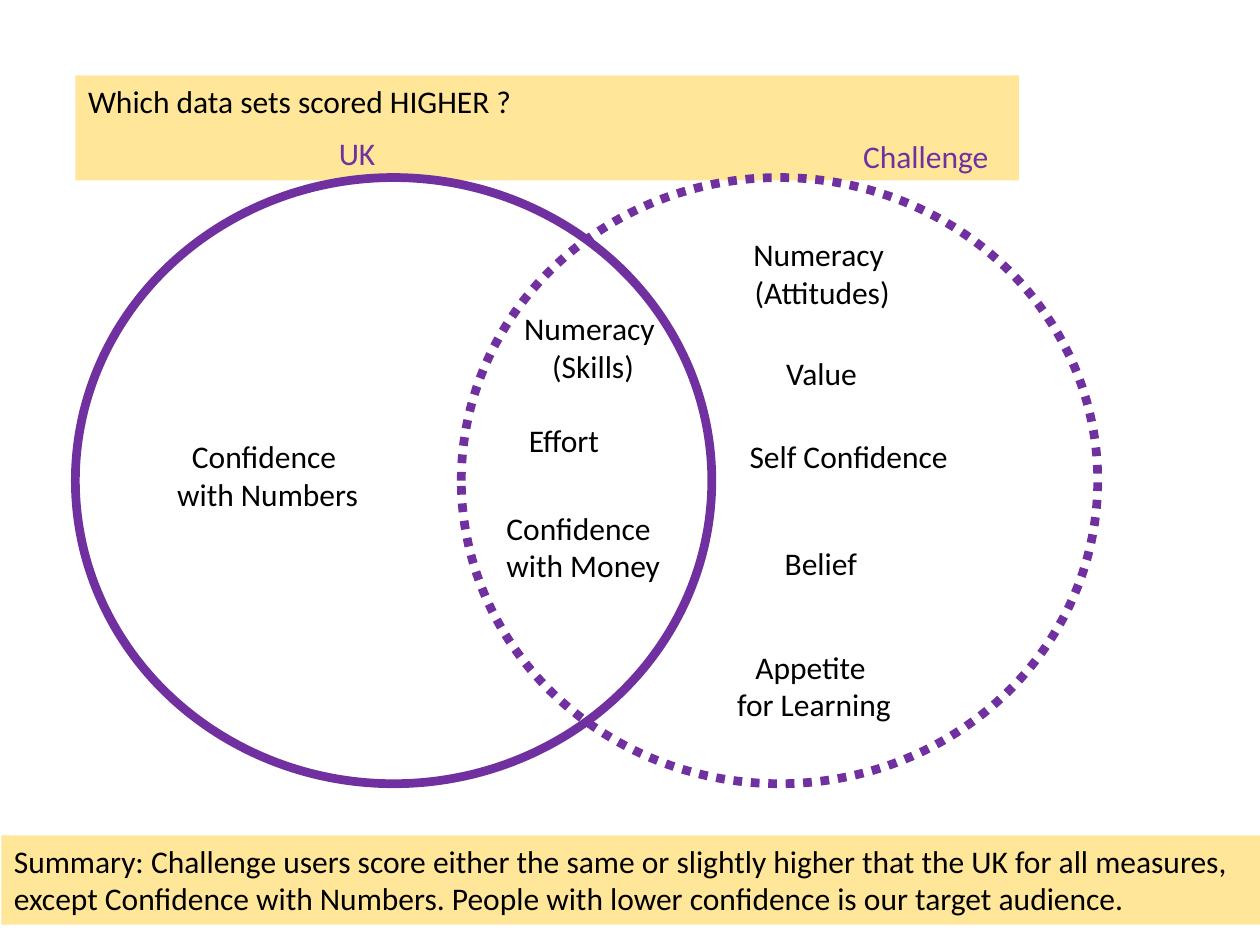
from pptx import Presentation
from pptx.dml.color import RGBColor
from pptx.enum.dml import MSO_LINE
from pptx.enum.shapes import MSO_SHAPE
from pptx.enum.text import MSO_ANCHOR, MSO_AUTO_SIZE, PP_ALIGN
from pptx.util import Cm, Pt

PURPLE, YELLOW, BLACK = "7030A0", "FFE699", "000000"
CIRCLE_TOP, CIRCLE_WIDTH, CIRCLE_HEIGHT = 3.58, 12.83, 12.22
FRAME_FORMAT = {
    "auto_size": MSO_AUTO_SIZE.SHAPE_TO_FIT_TEXT,
    "vertical_anchor": MSO_ANCHOR.TOP,
}
FONT_FORMAT = {"name": "Calibri", "size": Pt(18)}


def rgb(hex_colour):
    return RGBColor.from_string(hex_colour)


def box_height(lines):
    """Height in cm of a box that holds this many 18 pt lines."""
    return 1.02 + 0.78 * (len(lines) - 1)


def set_all(target, values):
    for attribute, value in values.items():
        setattr(target, attribute, value)


class VennSlide:
    def __init__(self, presentation):
        self.slide = presentation.slides.add_slide(presentation.slide_layouts[5])
        self.shapes = self.slide.shapes

    def set_text(self, shape, lines, colour=BLACK, align=PP_ALIGN.LEFT, wrap=True):
        frame = shape.text_frame
        frame.text = "\n".join(lines)
        set_all(frame, FRAME_FORMAT)
        frame.word_wrap = wrap
        for paragraph in frame.paragraphs:
            paragraph.alignment = align
            set_all(paragraph.font, FONT_FORMAT)
            paragraph.font.color.rgb = rgb(colour)

    def fill(self, shape):
        shape.fill.solid()
        shape.fill.fore_color.rgb = rgb(YELLOW)

    def circle(self, left, dash=MSO_LINE.SOLID):
        circle = self.shapes.add_shape(
            MSO_SHAPE.OVAL, Cm(left), Cm(CIRCLE_TOP), Cm(CIRCLE_WIDTH), Cm(CIRCLE_HEIGHT))
        circle.shadow.inherit = False
        circle.fill.background()
        circle.line.color.rgb = rgb(PURPLE)
        set_all(circle.line, {"width": Pt(5), "dash_style": dash})

    def label(self, left, top, width, lines, **style):
        label = self.shapes.add_textbox(
            Cm(left), Cm(top), Cm(width), Cm(box_height(lines)))
        self.set_text(label, lines, **style)

    def title(self, left, top, width, lines):
        title = self.shapes.title
        set_all(title, {"left": Cm(left), "top": Cm(top),
                        "width": Cm(width), "height": Cm(box_height(lines))})
        self.fill(title)
        self.set_text(title, lines)

    def banner(self, left, top, width, lines):
        banner = self.shapes.add_shape(
            MSO_SHAPE.RECTANGLE, Cm(left), Cm(top), Cm(width), Cm(box_height(lines)))
        banner.shadow.inherit = False
        banner.line.fill.background()
        self.fill(banner)
        self.set_text(banner, lines)


CENTRED_MEASURES = [
    (10.29, 6.1, 3.33, ["Numeracy ", "(Skills)"]),
    (14.91, 4.62, 3.33, ["Numeracy ", "(Attitudes)"]),
    (3.3, 8.69, 4.19, ["Confidence ", "with Numbers"]),
    (14.58, 12.93, 3.66, ["Appetite ", "for Learning"]),
]
LEFT_MEASURES = [
    (14.86, 8.69, 4.57, ["Self Confidence"]),
    (15.57, 10.85, 1.98, ["Belief"]),
    (15.6, 7.01, 1.96, ["Value"]),
    (9.96, 10.13, 3.66, ["Confidence", "with Money"]),
    (10.41, 8.36, 1.96, ["Effort"]),
]
DATA_SETS = [
    (6.58, 2.57, 1.5, ["UK"]),
    (17.15, 2.64, 5.41, ["Challenge"]),
]
SUMMARY = [
    "Summary: Challenge users score either the same or slightly higher that the UK for all measures,",
    "except Confidence with Numbers. People with lower confidence is our target audience.",
]


def main():
    presentation = Presentation()
    set_all(presentation, {"slide_width": Cm(25.4), "slide_height": Cm(19.05)})
    venn = VennSlide(presentation)
    venn.title(1.52, 1.52, 19.02, ["Which data sets scored HIGHER ?"])
    venn.circle(1.52)
    venn.circle(9.3, MSO_LINE.ROUND_DOT)
    for measure in CENTRED_MEASURES:
        venn.label(*measure, align=PP_ALIGN.CENTER, wrap=False)
    for measure in LEFT_MEASURES:
        venn.label(*measure, wrap=False)
    for data_set in DATA_SETS:
        venn.label(*data_set, colour=PURPLE)
    venn.banner(0.03, 16.84, 25.37, SUMMARY)
    presentation.save("out.pptx")


if __name__ == "__main__":
    main()
